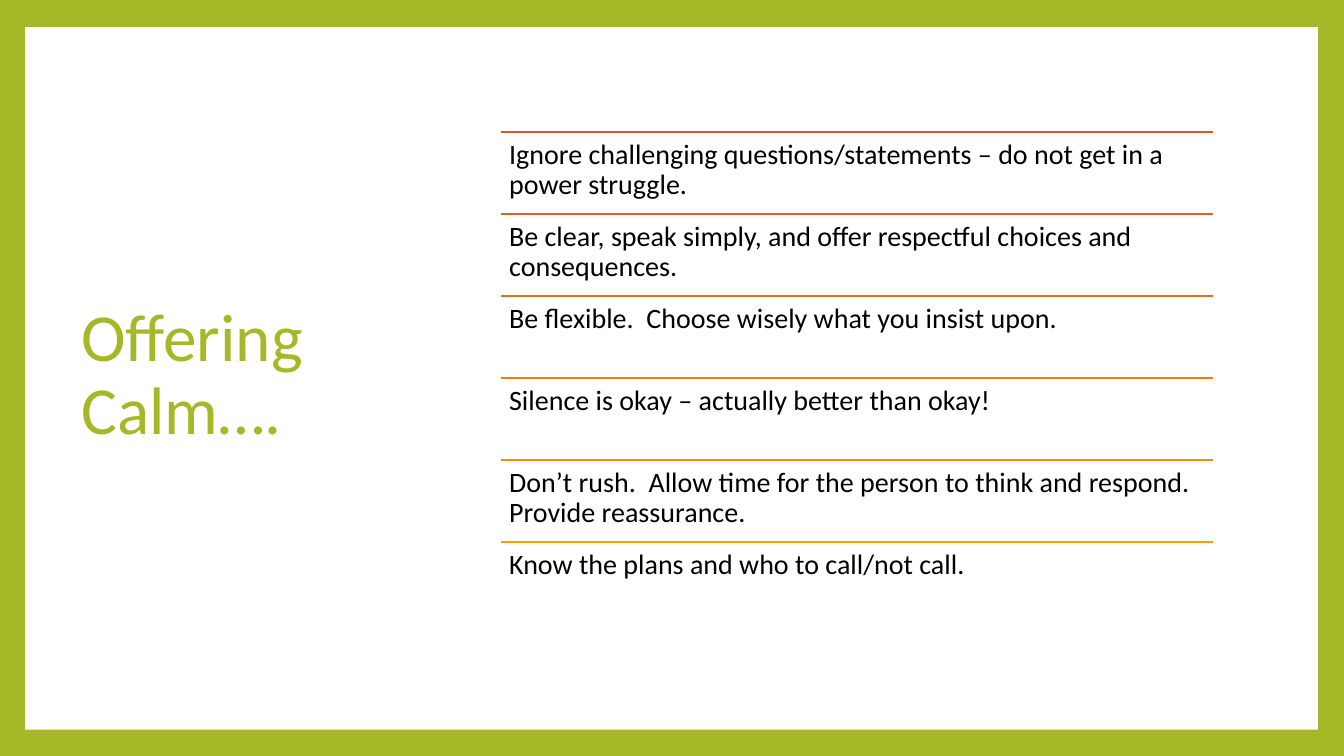
from lxml import etree
from pptx import Presentation
from pptx import util as u
from pptx.dml.color import RGBColor
from pptx.enum import shapes, text
from pptx.oxml.ns import qn

COLOURS = {"green": "A6B727", "white": "FFFFFF", "black": "000000"}

TIPS = [
    ("DF5327", "Ignore challenging questions/statements – do not get in a power struggle."),
    ("E55E1F", "Be clear, speak simply, and offer respectful choices and consequences."),
    ("EC6B17", "Be flexible.  Choose wisely what you insist upon."),
    ("F27A0F", "Silence is okay – actually better than okay!"),
    ("F88B07", "Don’t rush.  Allow time for the person to think and respond.  Provide reassurance."),
    ("FE9E00", "Know the plans and who to call/not call."),
]
LIST_LEFT, LIST_WIDTH = 4.97, 7.06
LIST_TOP, LAST_TOP = 1.31, 5.38
ROW_HEIGHT = (LAST_TOP - LIST_TOP) / (len(TIPS) - 1)


class SlideBuilder:
    font = "Calibri"
    line_spacing = 0.9
    rule_width = 1.5

    def __init__(self, page):
        self.page = page

    def background(self, colour):
        fill = self.page.background.fill
        fill.solid()
        fill.fore_color.rgb = RGBColor.from_string(colour)

    def panel(self, left, top, width, height, colour):
        panel = self.page.shapes.add_shape(
            shapes.MSO_SHAPE.RECTANGLE, *map(u.Inches, (left, top, width, height)))
        panel.shadow.inherit = False
        panel.fill.solid()
        panel.fill.fore_color.rgb = RGBColor.from_string(colour)
        panel.line.fill.background()

    def rule(self, left, top, width, colour):
        """Draw a horizontal divider."""
        rule = self.page.shapes.add_connector(
            shapes.MSO_CONNECTOR.STRAIGHT,
            *map(u.Inches, (left, top, left + width, top)))
        rule.line.color.rgb = RGBColor.from_string(colour)
        rule.line.width = u.Pt(self.rule_width)
        etree.SubElement(rule._element.spPr, qn("a:effectLst"))

    def words(self, content, left, top, width, height, size, colour, **frame_format):
        box = self.page.shapes.add_textbox(
            *map(u.Inches, (left, top, width, height)))
        frame = box.text_frame
        for name, value in {"word_wrap": True, **frame_format}.items():
            setattr(frame, name, value)
        para = frame.paragraphs[0]
        para.line_spacing = self.line_spacing
        span = para.add_run()
        span.text = content
        for name, value in {"name": self.font, "size": u.Pt(size)}.items():
            setattr(span.font, name, value)
        span.font.color.rgb = RGBColor.from_string(colour)


def main():
    deck = Presentation()
    deck.slide_width, deck.slide_height = u.Inches(13.33), u.Inches(7.5)
    builder = SlideBuilder(deck.slides.add_slide(deck.slide_layouts[6]))

    builder.background(COLOURS["green"])
    builder.panel(0.25, 0.27, 12.82, 6.97, COLOURS["white"])
    builder.words("Offering Calm….", 0.71, 0.67, 3.68, 6.13, 48, COLOURS["green"],
                  vertical_anchor=text.MSO_ANCHOR.MIDDLE)

    sides = ("left", "top", "right", "bottom")
    insets = {f"margin_{side}": u.Inches(0.08) for side in sides}
    for row, (rule_colour, tip) in enumerate(TIPS):
        top = LIST_TOP + row * ROW_HEIGHT
        builder.rule(LIST_LEFT, top, LIST_WIDTH, rule_colour)
        builder.words(tip, LIST_LEFT, top, LIST_WIDTH, ROW_HEIGHT, 20,
                      COLOURS["black"], **insets)

    deck.save("out.pptx")


if __name__ == "__main__":
    main()
